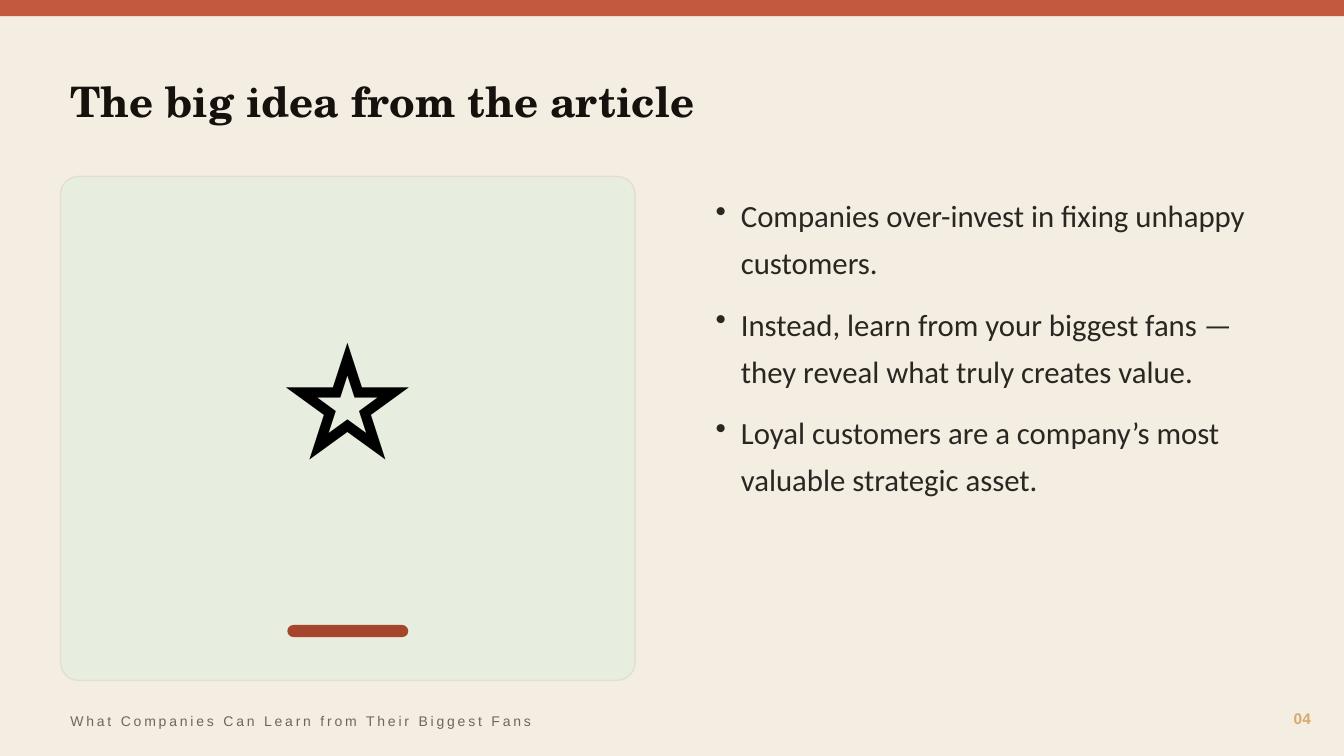
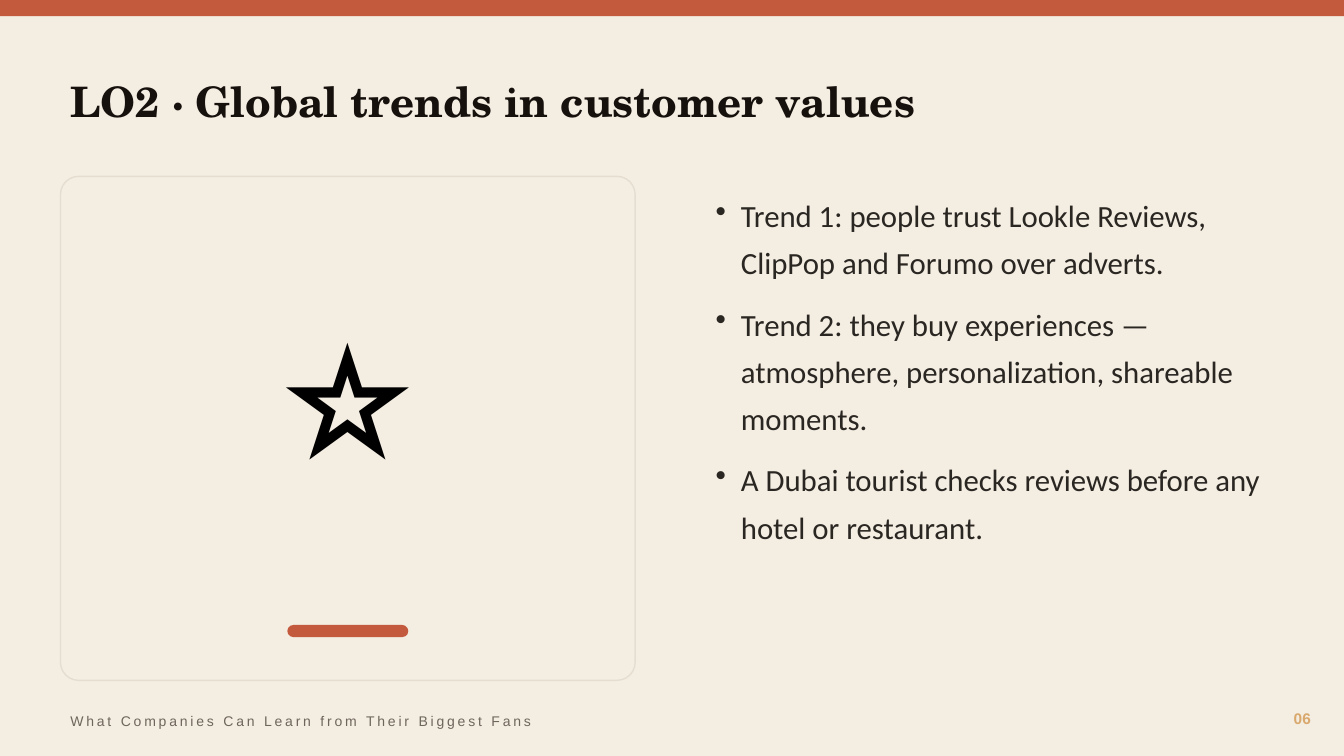
import dataclasses

import lxml.etree
import pptx
import pptx.dml.color
import pptx.enum.shapes
import pptx.enum.text
import pptx.oxml.ns
import pptx.util

Inches = pptx.util.Inches
Align = pptx.enum.text.PP_ALIGN
Anchor = pptx.enum.text.MSO_ANCHOR
Preset = pptx.enum.shapes.MSO_SHAPE


@dataclasses.dataclass(frozen=True)
class TextStyle:
    size: float
    font: str
    color: str
    bold: bool = False
    spacing: float = 0


@dataclasses.dataclass(frozen=True)
class Theme:
    background: str = "F4EDE2"
    accent: str = "C45A3D"
    dark_accent: str = "A4452C"
    sage: str = "E8EEDF"
    border: str = "E4DDD0"
    title: TextStyle = TextStyle(30, "TeX Gyre Schola", "16110D", bold=True)
    icon: TextStyle = TextStyle(150, "Calibri", "000000")
    body: TextStyle = TextStyle(22, "Calibri", "2A2622")
    number: TextStyle = TextStyle(11, "Arial", "D9A86C", bold=True)
    footer: TextStyle = TextStyle(10, "Arial", "6E665C", spacing=2)


THEME = Theme()
WIDTH, HEIGHT = 13.33, 7.5
FOOTER = "What Companies Can Learn from Their Biggest Fans"

SLIDES = [
    {
        "title": "The big idea from the article",
        "number": "04",
        "card": THEME.sage,
        "bar": THEME.dark_accent,
        "bullets": [
            "Companies over-invest in fixing unhappy customers.",
            "Instead, learn from your biggest fans — they reveal what truly creates value.",
            "Loyal customers are a company’s most valuable strategic asset.",
        ],
    },
    {
        "title": "LO2 · Global trends in customer values",
        "number": "06",
        "card": THEME.background,
        "bar": THEME.accent,
        "bullets": [
            "Trend 1: people trust Lookle Reviews, ClipPop and Forumo over adverts.",
            "Trend 2: they buy experiences — atmosphere, personalization, shareable moments.",
            "A Dubai tourist checks reviews before any hotel or restaurant.",
        ],
    },
]


def rgb(value):
    return pptx.dml.color.RGBColor.from_string(value)


def add_box(slide, box, preset, fill, line=None, rounding=None):
    shape = slide.shapes.add_shape(preset, *map(Inches, box))
    shape.shadow.inherit = False
    shape.fill.solid()
    shape.fill.fore_color.rgb = rgb(fill)
    if line:
        shape.line.color.rgb = rgb(line)
        shape.line.width = pptx.util.Pt(1)
    else:
        shape.line.fill.background()
    if rounding is not None:
        shape.adjustments[0] = rounding


def add_frame(slide, box, anchor=Anchor.MIDDLE):
    frame = slide.shapes.add_textbox(*map(Inches, box)).text_frame
    frame.word_wrap = True
    frame.vertical_anchor = anchor
    return frame


def add_run(paragraph, text, style):
    run = paragraph.add_run()
    run.text = text
    font = run.font
    font.size = pptx.util.Pt(style.size)
    font.name = style.font
    font.bold = style.bold
    font.color.rgb = rgb(style.color)
    if style.spacing:
        run._r.get_or_add_rPr().set("spc", str(int(style.spacing * 100)))


def add_label(slide, box, text, style, alignment=Align.LEFT):
    paragraph = add_frame(slide, box).paragraphs[0]
    paragraph.alignment = alignment
    add_run(paragraph, text, style)


def add_icon_card(slide, box, fill, bar_color):
    left, top, width, height = box
    add_box(slide, box, Preset.ROUNDED_RECTANGLE, fill, THEME.border, 0.036)
    add_label(slide, (left, top, width, height - 0.9), "⭐", THEME.icon, Align.CENTER)
    # Short bar centred near the bottom of the card
    bar_width = 1.2
    bar = (left + (width - bar_width) / 2, top + height - 0.55, bar_width, 0.12)
    add_box(slide, bar, Preset.ROUNDED_RECTANGLE, bar_color, rounding=0.5)


def add_bullets(slide, box, items):
    frame = add_frame(slide, box, Anchor.TOP)
    for index, item in enumerate(items):
        paragraph = frame.add_paragraph() if index else frame.paragraphs[0]
        paragraph.line_spacing = 1.28
        paragraph.space_after = pptx.util.Pt(10)
        properties = paragraph._p.get_or_add_pPr()
        properties.set("marL", str(Inches(0.25)))
        properties.set("indent", str(Inches(-0.25)))
        bullet = lxml.etree.SubElement(properties, pptx.oxml.ns.qn("a:buChar"))
        bullet.set("char", "•")
        add_run(paragraph, item, THEME.body)


def add_content_slide(presentation, content):
    slide = presentation.slides.add_slide(presentation.slide_layouts[6])
    slide.background.fill.solid()
    slide.background.fill.fore_color.rgb = rgb(THEME.background)
    # Top band and title
    add_box(slide, (0, 0, WIDTH, 0.16), Preset.RECTANGLE, THEME.accent)
    add_label(slide, (0.6, 0.5, 12.1, 1), content["title"], THEME.title)
    # Icon card on the left, bullets on the right
    add_icon_card(slide, (0.6, 1.75, 5.7, 5), content["card"], content["bar"])
    add_bullets(slide, (7, 1.8, 5.7, 5), content["bullets"])
    # Page number and footer
    add_label(slide, (12.2, 6.95, 0.9, 0.35), content["number"], THEME.number, Align.RIGHT)
    add_label(slide, (0.6, 7, 8, 0.3), FOOTER, THEME.footer)


def main():
    presentation = pptx.Presentation()
    presentation.slide_width = Inches(WIDTH)
    presentation.slide_height = Inches(HEIGHT)
    for content in SLIDES:
        add_content_slide(presentation, content)
    presentation.save("out.pptx")


if __name__ == "__main__":
    main()
